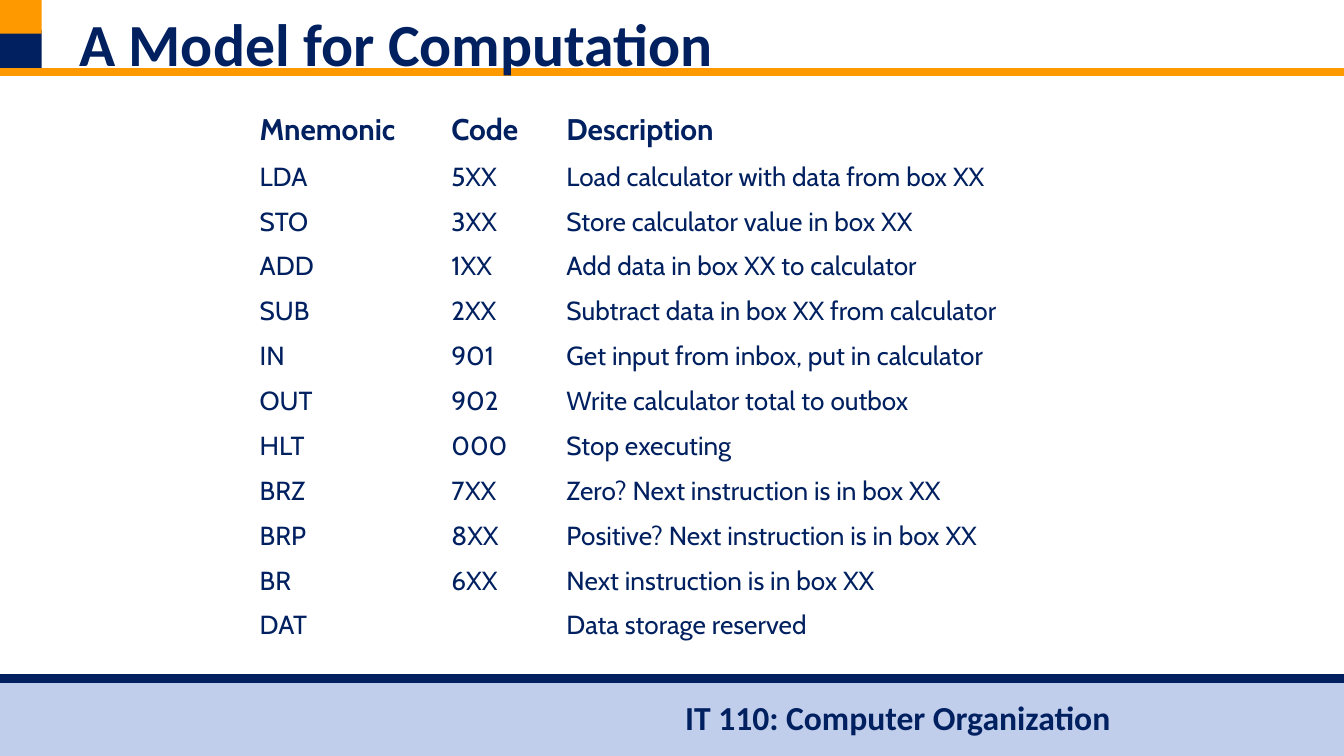
"""Build the slide listing the instruction set of a simple computer."""
from pptx import Presentation
from pptx.dml.color import RGBColor
from pptx.enum.shapes import MSO_CONNECTOR, MSO_SHAPE
from pptx.util import Pt
from lxml import etree

RECTANGLE = MSO_SHAPE.RECTANGLE
STRAIGHT = MSO_CONNECTOR.STRAIGHT
NAVY, ORANGE, PALE_BLUE, WHITE = "002060", "FF9900", "C0CDEB", "FFFFFF"
EFFECT_LIST = "{http://schemas.openxmlformats.org/drawingml/2006/main}effectLst"
WIDTH, HEIGHT = 720, 405


def color(hex_string):
    return RGBColor.from_string(hex_string)


def write(text_frame, text, font_name, size, bold):
    paragraph = text_frame.paragraphs[0]
    paragraph.text = text
    font = paragraph.font
    font.name = font_name
    font.size = Pt(size)
    font.bold = bold
    font.color.rgb = color(NAVY)


presentation = Presentation()
presentation.slide_width = Pt(WIDTH)
presentation.slide_height = Pt(HEIGHT)
slide = presentation.slides.add_slide(presentation.slide_layouts[6])

bands = [
    (0, 364.5, WIDTH, 40.5, PALE_BLUE),
    (0, 16, 22.3, 23, NAVY),
    (0, 0, 22.3, 18, ORANGE),
]
for left, top, width, height, fill in bands:
    shape = slide.shapes.add_shape(RECTANGLE, Pt(left), Pt(top), Pt(width), Pt(height))
    shape.shadow.inherit = False
    shape.fill.solid()
    shape.fill.fore_color.rgb = color(fill)
    shape.line.fill.background()

for top, line_color in [(38.7, ORANGE), (363.6, NAVY)]:
    rule = slide.shapes.add_connector(STRAIGHT, Pt(0), Pt(top), Pt(WIDTH), Pt(top))
    rule.line.color.rgb = color(line_color)
    rule.line.width = Pt(4.5)
    etree.SubElement(rule._element.spPr, EFFECT_LIST)

captions = [
    (360, 370, 244, 29, "IT 110: Computer Organization", 18),
    (35.3, 0, 649.4, 38.2, "A Model for Computation", 32),
]
for left, top, width, height, text, size in captions:
    text_box = slide.shapes.add_textbox(Pt(left), Pt(top), Pt(width), Pt(height))
    text_box.text_frame.word_wrap = True
    write(text_box.text_frame, text, "Calibri", size, True)

instructions = [
    ("Mnemonic", "Code", "Description"),
    ("LDA", "5XX", "Load calculator with data from box XX"),
    ("STO", "3XX", "Store calculator value in box XX"),
    ("ADD", "1XX", "Add data in box XX to calculator"),
    ("SUB", "2XX", "Subtract data in box XX from calculator"),
    ("IN", "901", "Get input from inbox, put in calculator"),
    ("OUT", "902", "Write calculator total to outbox"),
    ("HLT", "000", "Stop executing"),
    ("BRZ", "7XX", "Zero? Next instruction is in box XX"),
    ("BRP", "8XX", "Positive? Next instruction is in box XX"),
    ("BR", "6XX", "Next instruction is in box XX"),
    ("DAT", "", "Data storage reserved"),
]
column_widths = [102.7, 61.7, 273.6]
table = slide.shapes.add_table(
    len(instructions), len(column_widths), Pt(131.9), Pt(56.2), Pt(438), Pt(166.5)
).table
for column, width in zip(table.columns, column_widths):
    column.width = Pt(width)
for row_index, (row, texts) in enumerate(zip(table.rows, instructions)):
    is_header = row_index == 0
    row.height = Pt(15.8 if is_header else 13.7)
    for cell, text in zip(row.cells, texts):
        cell.fill.solid()
        cell.fill.fore_color.rgb = color(WHITE)
        write(cell.text_frame, text, "Cabin", 16 if is_header else 14, is_header)

presentation.save("out.pptx")
